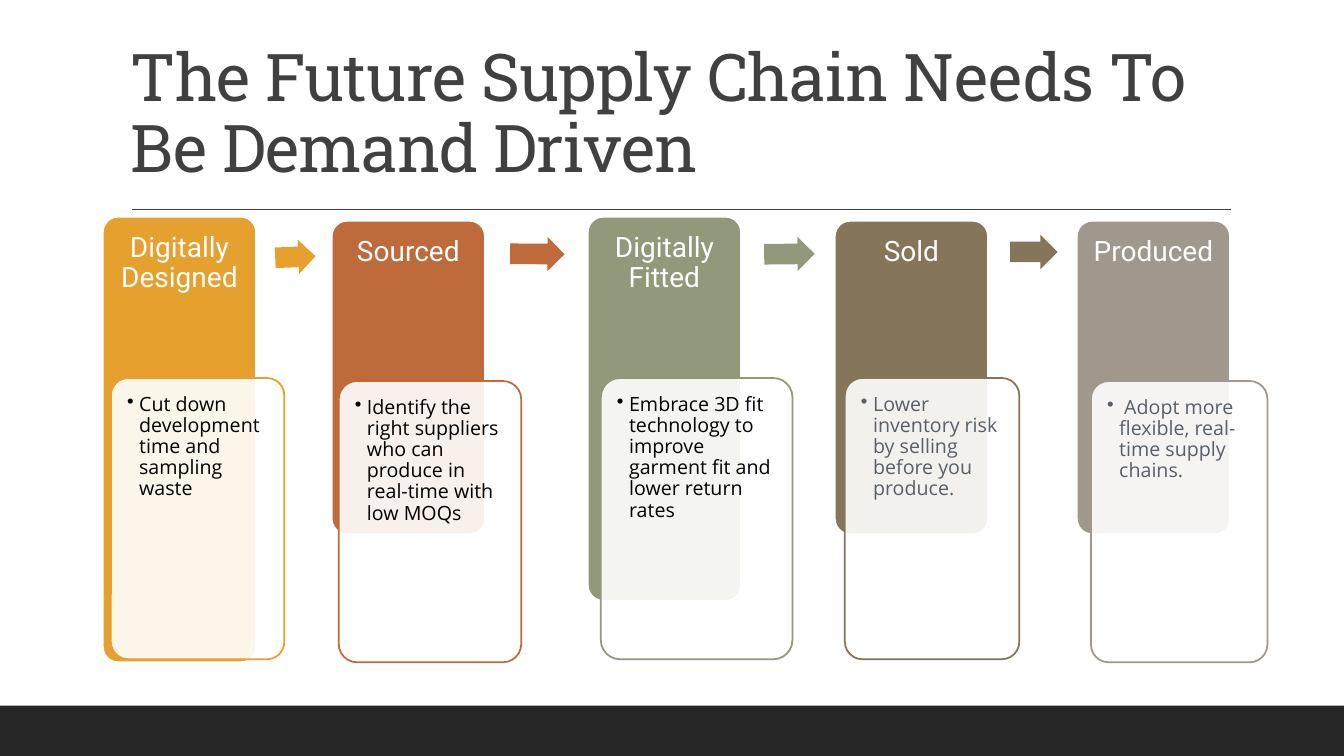
import pptx
import pptx.util
import pptx.dml.color
import pptx.enum.shapes
import pptx.enum.text
import pptx.oxml
import pptx.oxml.ns
from lxml import etree

Inches = pptx.util.Inches
Pt = pptx.util.Pt
Kind = pptx.enum.shapes.MSO_SHAPE
Align = pptx.enum.text.PP_ALIGN
Anchor = pptx.enum.text.MSO_ANCHOR
qn = pptx.oxml.ns.qn

CARD_WIDTH = 1.52
BOX_HEIGHT = 2.79
BOX_PAD = 0.05
ARROW_HEIGHT = 0.34

# heading, heading height, colour, card (left, top, height),
# detail, detail colour, box (left, top, width)
STEPS = [
    ("Digitally Designed", 0.89, "E6A02E", (1.02, 2.15, 4.42),
     "Cut down development time and sampling waste",
     "000000", (1.1, 3.75, 1.72)),
    ("Sourced", 0.62, "BF6A3B", (3.29, 2.19, 3.11),
     "Identify the right suppliers who can produce in real-time with low MOQs",
     "000000", (3.36, 3.78, 1.81)),
    ("Digitally Fitted", 0.76, "92987A", (5.83, 2.15, 3.81),
     "Embrace 3D fit technology to improve garment fit and lower return rates",
     "000000", (5.96, 3.75, 1.9)),
    ("Sold", 0.62, "857659", (8.28, 2.19, 3.11),
     "Lower inventory risk by selling before you produce.",
     "585F69", (8.38, 3.75, 1.73)),
    ("Produced", 0.62, "A0988C", (10.68, 2.19, 3.11),
     " Adopt more flexible, real-time supply chains.",
     "585F69", (10.82, 3.78, 1.75)),
]

# left, top, width, rotation; each takes the colour of the step it leaves
ARROWS = [
    (2.73, 2.38, 0.4, -2.3),
    (5.06, 2.35, 0.54, 0.5),
    (7.58, 2.35, 0.5, -0.5),
    (10.02, 2.33, 0.47, 0),
]


def color(code):
    return pptx.dml.color.RGBColor.from_string(code)


def add_shape(slide, kind, area, fill, line=None, opacity=None, adjust=()):
    """Add a filled preset shape; area is left, top, width, height in inches."""
    shape = slide.shapes.add_shape(kind, *map(Inches, area))
    shape.shadow.inherit = False
    shape.fill.solid()
    shape.fill.fore_color.rgb = color(fill)
    if opacity is not None:
        tint = shape.fill._xPr.find(qn("a:solidFill"))[0]
        etree.SubElement(tint, qn("a:alpha"), val=str(opacity * 1000))
    if line:
        shape.line.color.rgb = color(line)
        shape.line.width = Pt(1.25)
    else:
        shape.line.fill.background()
    for index, value in enumerate(adjust):
        shape.adjustments[index] = value
    return shape


def add_bullet(para, indent):
    props = para._p.get_or_add_pPr()
    props.set("marL", str(Inches(indent)))
    props.set("indent", str(-Inches(indent)))
    etree.SubElement(props, qn("a:buChar"), char="•")


def add_text(slide, area, text, *, size, font, tone, insets,
             align=Align.LEFT, anchor=Anchor.TOP, bullet=False, spacing=None):
    """Add a text box; insets are left, top, right, bottom in inches."""
    frame = slide.shapes.add_textbox(*map(Inches, area)).text_frame
    frame.word_wrap = True
    frame.vertical_anchor = anchor
    (frame.margin_left, frame.margin_top,
     frame.margin_right, frame.margin_bottom) = map(Inches, insets)
    para = frame.paragraphs[0]
    para.alignment = align
    para.line_spacing = 0.9
    if bullet:
        add_bullet(para, 0.12)
    run = para.add_run()
    run.text = text
    run.font.size = Pt(size)
    run.font.name = font
    run.font.color.rgb = color(tone)
    if spacing is not None:
        run._r.get_or_add_rPr().set("spc", str(round(spacing * 100)))


def add_rule(slide, left, right, top):
    ends = map(Inches, (left, top, right, top))
    rule = slide.shapes.add_connector(
        pptx.enum.shapes.MSO_CONNECTOR.STRAIGHT, *ends)
    rule.line.color.rgb = color("404040")
    rule.line.width = Pt(1)
    etree.SubElement(rule._element.spPr, qn("a:effectLst"))


def add_step(slide, heading, head_height, tone, card, detail, ink, box):
    """Add a coloured card with its heading and the detail box over it."""
    left, top, height = card
    add_shape(slide, Kind.ROUNDED_RECTANGLE, (left, top, CARD_WIDTH, height),
              tone, line="FFFFFF", adjust=[0.1])
    add_text(slide, (left, top, CARD_WIDTH, head_height), heading,
             size=20, font="Roboto", tone="FFFFFF", align=Align.CENTER,
             insets=(0.16, 0.16, 0.16, 0.08))
    left, top, width = box
    add_shape(slide, Kind.ROUNDED_RECTANGLE, (left, top, width, BOX_HEIGHT),
              "FFFFFF", line=tone, opacity=90, adjust=[0.1])
    inner = (left + BOX_PAD, top + BOX_PAD,
             width - 2 * BOX_PAD, BOX_HEIGHT - 2 * BOX_PAD)
    add_text(slide, inner, detail, size=14, font="Open Sans", tone=ink,
             insets=[0.11] * 4, bullet=True)


def add_arrow(slide, tone, left, top, width, turn):
    arrow = add_shape(slide, Kind.RIGHT_ARROW,
                      (left, top, width, ARROW_HEIGHT), tone,
                      adjust=[0.6, 0.5])
    arrow.rotation = turn


def main():
    deck = pptx.Presentation()
    deck.slide_width = Inches(13.33)
    deck.slide_height = Inches(7.5)
    slide = deck.slides.add_slide(deck.slide_layouts[6])

    add_shape(slide, Kind.RECTANGLE, (0, 7, 13.33, 0.5), "262626")
    add_rule(slide, 1.31, 12.21, 2.08)
    add_text(slide, (1.2, 0.31, 11, 1.59),
             "The Future Supply Chain Needs To Be Demand Driven",
             size=47, font="Roboto Slab", tone="404040", spacing=-0.5,
             anchor=Anchor.BOTTOM, insets=(0.1, 0.05, 0.1, 0.05))
    for step in STEPS:
        add_step(slide, *step)
    for step, arrow in zip(STEPS, ARROWS):
        add_arrow(slide, step[2], *arrow)

    deck.save("out.pptx")


if __name__ == "__main__":
    main()
